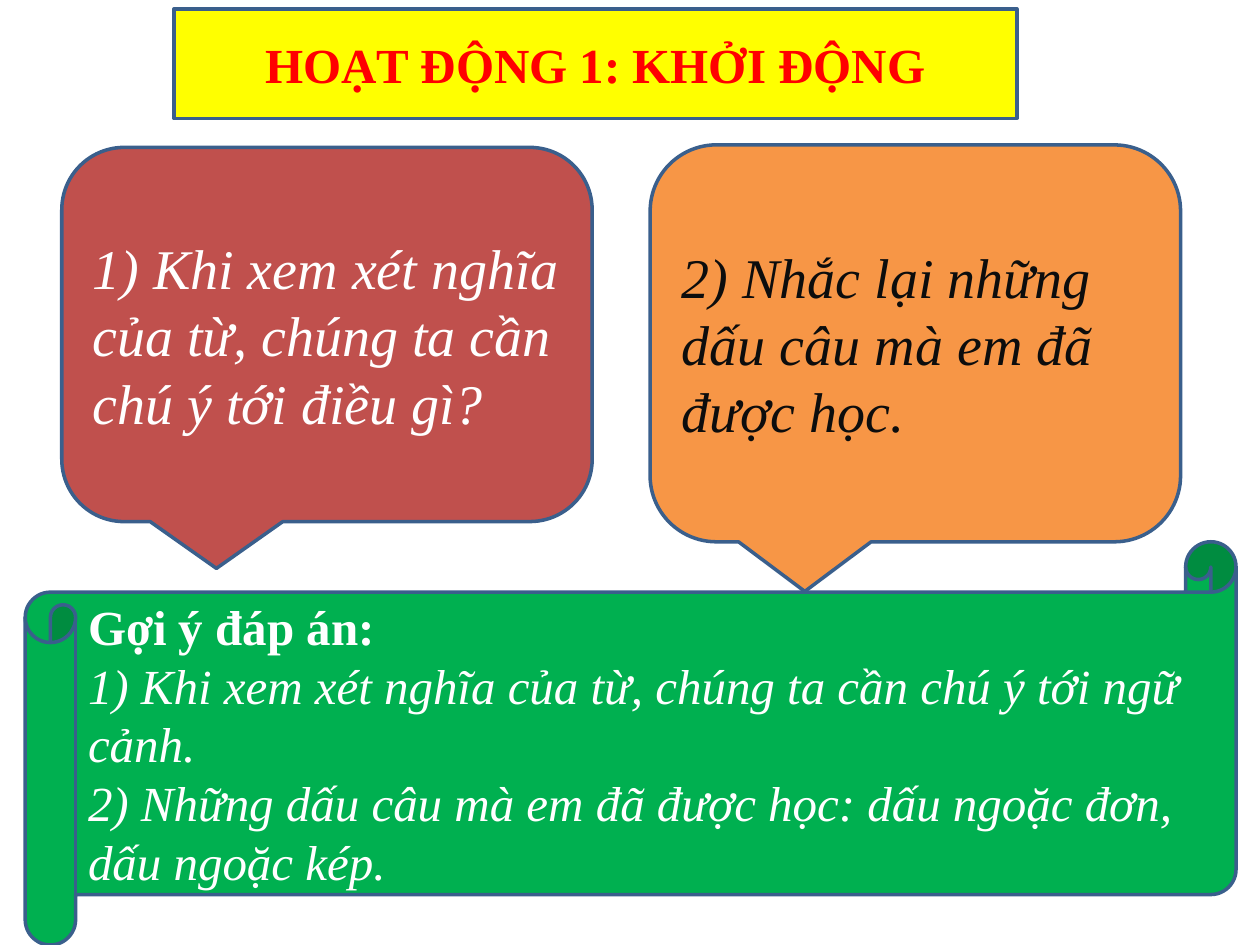
import pptx
import pptx.util
from dataclasses import dataclass
from lxml import etree
from pptx.dml.color import RGBColor
from pptx.enum.shapes import MSO_SHAPE
from pptx.enum.text import MSO_ANCHOR, MSO_AUTO_SIZE, PP_ALIGN
from pptx.oxml.ns import qn
from pptx.util import Inches


@dataclass(frozen=True)
class Theme:
    font: str = "Times New Roman"
    outline: str = "3A5F8C"
    outline_width: float = 2
    banner: str = "FFFF00"
    heading: str = "FF0000"
    first_question: str = "C0504D"
    second_question: str = "F79646"
    answer: str = "00B050"
    light: str = "FFFFFF"
    dark: str = "0D0D0D"
    text_size: int = 28
    question_size: int = 32


THEME = Theme()


def paint(panel, fill):
    """Solid fill with the common outline."""
    panel.fill.solid()
    panel.fill.fore_color.rgb = RGBColor.from_string(fill)
    panel.line.color.rgb = RGBColor.from_string(THEME.outline)
    panel.line.width = pptx.util.Pt(THEME.outline_width)
    panel.shadow.inherit = False


def write(panel, lines, size, color, align=PP_ALIGN.LEFT):
    """One paragraph for each (text, bold, italic) line."""
    frame = panel.text_frame
    frame.word_wrap = True
    frame.auto_size = MSO_AUTO_SIZE.NONE
    frame.vertical_anchor = MSO_ANCHOR.MIDDLE
    for index, (text, bold, italic) in enumerate(lines):
        paragraph = frame.add_paragraph() if index else frame.paragraphs[0]
        paragraph.alignment = align
        run = paragraph.add_run()
        run.text = text
        run.font.name = THEME.font
        run.font.size = pptx.util.Pt(size)
        run.font.bold = bold
        run.font.italic = italic
        run.font.color.rgb = RGBColor.from_string(color)


def add_banner(slide, text, left, top, width, height):
    """Title placeholder with a terminator outline."""
    banner = slide.shapes.title
    banner.left, banner.top = Inches(left), Inches(top)
    banner.width, banner.height = Inches(width), Inches(height)
    geometry = etree.SubElement(banner.element.spPr, qn("a:prstGeom"),
                                prst="flowChartTerminator")
    etree.SubElement(geometry, qn("a:avLst"))
    paint(banner, THEME.banner)
    write(banner, [(text, True, False)], THEME.text_size, THEME.heading,
          PP_ALIGN.CENTER)


def add_panel(slide, kind, box, fill, lines, size, color):
    panel = slide.shapes.add_shape(kind, *map(Inches, box))
    paint(panel, fill)
    write(panel, lines, size, color)


def add_question(slide, text, box, fill, color):
    add_panel(slide, MSO_SHAPE.ROUNDED_RECTANGULAR_CALLOUT, box, fill,
              [(text, False, True)], THEME.question_size, color)


def main():
    deck = pptx.Presentation()
    deck.slide_width, deck.slide_height = Inches(10), Inches(7.5)
    slide = deck.slides.add_slide(deck.slide_layouts[5])

    # Activity heading
    add_banner(slide, "HOẠT ĐỘNG 1: KHỞI ĐỘNG", 1.38, 0.07, 6.69, 0.87)

    # Two questions
    add_question(slide,
                 "1) Khi xem xét nghĩa của từ, chúng ta cần chú ý tới điều gì?",
                 (0.49, 1.17, 4.21, 2.97), THEME.first_question, THEME.light)
    add_question(slide, "2) Nhắc lại những dấu câu mà em đã được học.",
                 (5.16, 1.15, 4.21, 3.15), THEME.second_question, THEME.dark)

    # Suggested answers
    answers = [
        ("Gợi ý đáp án:", True, False),
        ("1) Khi xem xét nghĩa của từ, chúng ta cần chú ý tới ngữ cảnh.",
         False, True),
        ("2) Những dấu câu mà em đã được học: dấu ngoặc đơn, dấu ngoặc kép.",
         False, True),
    ]
    add_panel(slide, MSO_SHAPE.HORIZONTAL_SCROLL, (0.2, 4.3, 9.61, 3.2),
              THEME.answer, answers, THEME.text_size, THEME.light)

    deck.save("out.pptx")


if __name__ == "__main__":
    main()
